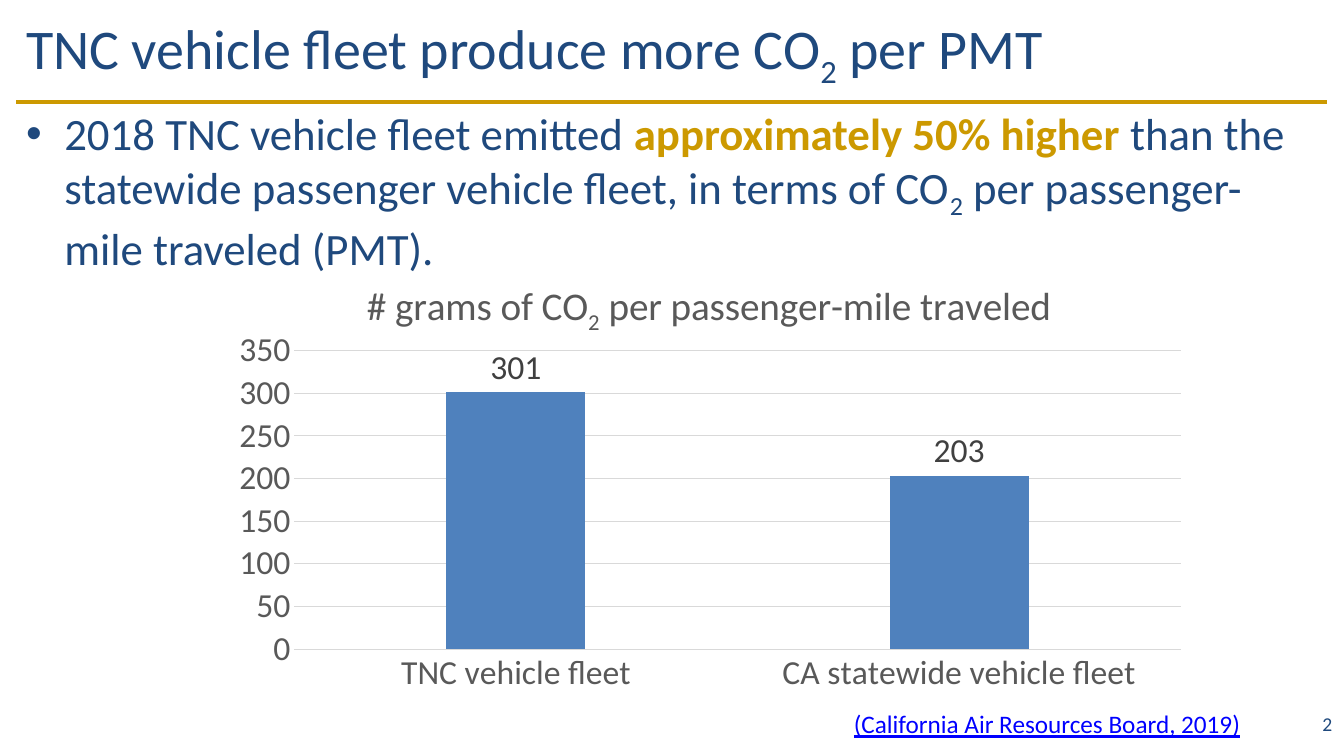
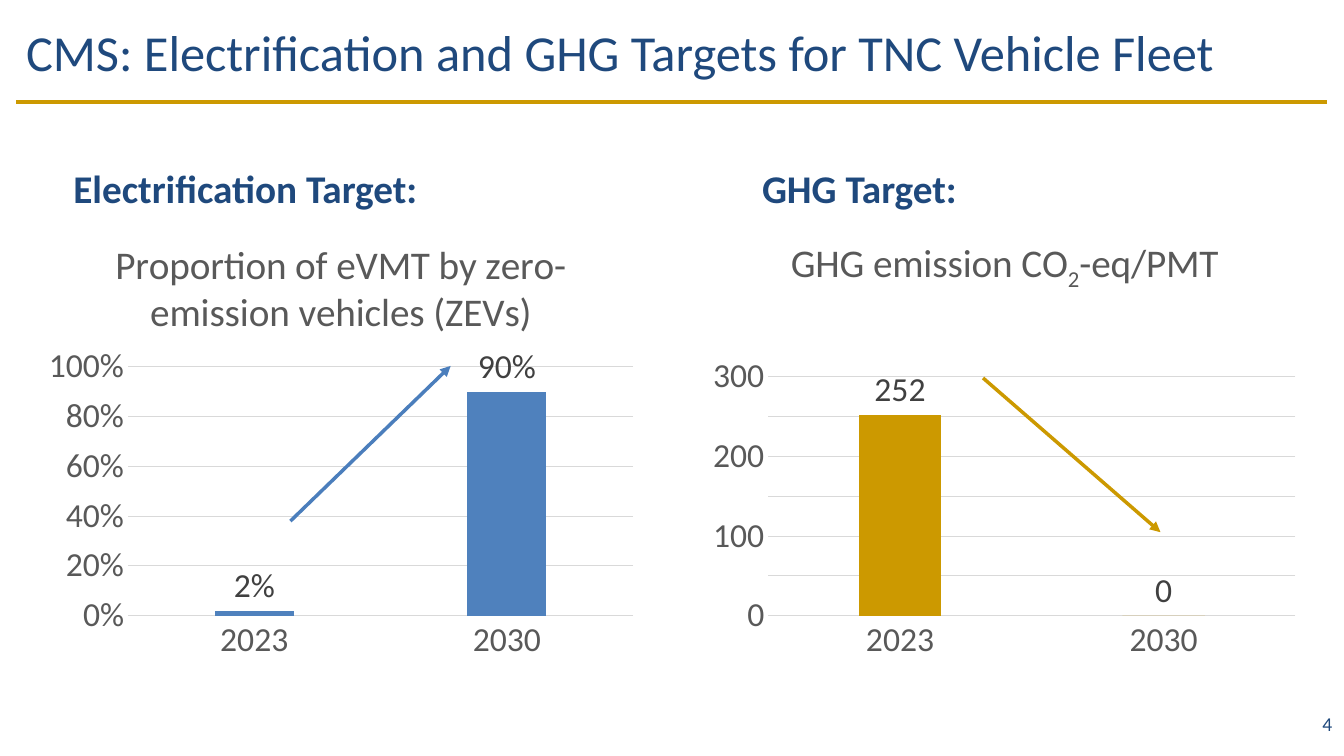
from lxml import etree
from pptx import Presentation
from pptx.chart.data import CategoryChartData
from pptx.dml.color import RGBColor
from pptx.enum.chart import XL_CHART_TYPE, XL_LABEL_POSITION, XL_TICK_MARK
from pptx.enum.shapes import MSO_CONNECTOR
from pptx.enum.text import MSO_ANCHOR, PP_ALIGN
from pptx.oxml.ns import qn
from pptx.util import Pt

# Shared style: 100 px make one inch
PX = 9144
FONT = "Calibri"
NAVY = RGBColor(0x1F, 0x49, 0x7D)
GOLD = RGBColor(0xCC, 0x99, 0x00)
BLUE = RGBColor(0x4F, 0x81, 0xBD)
ARROW_BLUE = RGBColor(0x4B, 0x7E, 0xBC)
LINK_BLUE = RGBColor(0x00, 0x00, 0xFF)
AXIS_GRAY = RGBColor(0x59, 0x59, 0x59)
LABEL_GRAY = RGBColor(0x40, 0x40, 0x40)
GRID_GRAY = RGBColor(0xD9, 0xD9, 0xD9)
COLUMN = XL_CHART_TYPE.COLUMN_CLUSTERED
OUTSIDE_END = XL_LABEL_POSITION.OUTSIDE_END
NO_TICK = XL_TICK_MARK.NONE
STRAIGHT = MSO_CONNECTOR.STRAIGHT
TOP, MIDDLE = MSO_ANCHOR.TOP, MSO_ANCHOR.MIDDLE
LEFT, CENTER = PP_ALIGN.LEFT, PP_ALIGN.CENTER

TITLE_BOX = (16, 1, 1300, 100)
NUMBER_BOX = (1161, 698, 311, 40)
PLAIN, SUBSCRIPT, STRONG = "plain", "subscript", "strong"


def write_text(text_frame, runs, size, color, bold=False, align=LEFT):
    """Fill the first paragraph with (text, style) runs and return it."""
    paragraph = text_frame.paragraphs[0]
    paragraph.alignment = align
    font = paragraph.font
    font.name, font.size, font.bold = FONT, Pt(size), bold
    font.color.rgb = color
    for text, style in runs:
        run = paragraph.add_run()
        run.text = text
        if style == SUBSCRIPT:
            run._r.get_or_add_rPr().set("baseline", "-25000")
        elif style == STRONG:
            run.font.bold = True
            run.font.color.rgb = GOLD
    return paragraph


def add_column_chart(slide, box, plot_box, title_runs, categories, values,
                     color, maximum, unit, number_format):
    """Add a one-series column chart; both boxes are in slide px."""
    data = CategoryChartData()
    data.categories = categories
    data.add_series("Series 1", values)
    chart = slide.shapes.add_chart(COLUMN, *(n * PX for n in box), data).chart
    chart.has_legend = False
    chart.font.name, chart.font.size = FONT, Pt(24)
    chart.font.color.rgb = AXIS_GRAY

    chart.has_title = True
    chart.chart_title.include_in_layout = False
    write_text(chart.chart_title.text_frame, title_runs, 28, AXIS_GRAY, align=CENTER)

    # Columns and their labels
    plot = chart.plots[0]
    plot.gap_width, plot.overlap = 219, -27
    plot.vary_by_categories = False
    fill = plot.series[0].format.fill
    fill.solid()
    fill.fore_color.rgb = color
    plot.has_data_labels = True
    labels = plot.data_labels
    labels.show_value = True
    labels.position = OUTSIDE_END
    labels.font.name, labels.font.size = FONT, Pt(24)
    labels.font.color.rgb = LABEL_GRAY

    # Axes and gridlines
    category_axis, value_axis = chart.category_axis, chart.value_axis
    for axis in (category_axis, value_axis):
        axis.major_tick_mark = axis.minor_tick_mark = NO_TICK
    value_axis.minimum_scale, value_axis.maximum_scale = 0, maximum
    value_axis.major_unit = unit
    value_axis.format.line.fill.background()
    for line in (category_axis.format.line, value_axis.major_gridlines.format.line):
        line.color.rgb = GRID_GRAY
        line.width = Pt(0.75)
    for numbers in (labels, value_axis.tick_labels):
        numbers.number_format = number_format
        numbers.number_format_is_linked = False

    # Fixed inner plot area, as fractions of the chart
    left, top, width, height = box
    plot_left, plot_top, plot_width, plot_height = plot_box
    plot_area = chart._chartSpace.find(".//" + qn("c:plotArea"))
    layout = plot_area.find(qn("c:layout"))
    if layout is None:
        layout = etree.Element(qn("c:layout"))
        plot_area.insert(0, layout)
    manual = etree.SubElement(layout, qn("c:manualLayout"))
    settings = (
        ("layoutTarget", "inner"), ("xMode", "edge"), ("yMode", "edge"),
        ("x", (plot_left - left) / width), ("y", (plot_top - top) / height),
        ("w", plot_width / width), ("h", plot_height / height),
    )
    for name, value in settings:
        etree.SubElement(manual, qn("c:" + name)).set("val", str(value))


presentation = Presentation()
presentation.slide_width = 1333 * PX
presentation.slide_height = 750 * PX
blank_layout = presentation.slide_layouts[6]
emissions_slide = presentation.slides.add_slide(blank_layout)
targets_slide = presentation.slides.add_slide(blank_layout)

# Charts
add_column_chart(
    emissions_slide, (217, 263, 972, 435), (292, 348, 879, 296),
    [("# grams of CO", PLAIN), ("2", SUBSCRIPT),
     (" per passenger-mile traveled", PLAIN)],
    ["TNC vehicle fleet", "CA statewide vehicle fleet"], [301, 203],
    BLUE, 350, 50, "General")
add_column_chart(
    targets_slide, (36, 215, 604, 450), (127, 364, 501, 247),
    [("Proportion of eVMT by zero-emission vehicles (ZEVs)", PLAIN)],
    ["2023", "2030"], [0.02, 0.9], BLUE, 1, 0.2, "0%")
add_column_chart(
    targets_slide, (696, 220, 601, 445), (762, 374, 523, 237),
    [("GHG emission CO", PLAIN), ("2", SUBSCRIPT), ("-eq/PMT", PLAIN)],
    ["2023", "2030"], [252, 0], GOLD, 300, 50, "General")

# Text: slide, box, runs, size, color, bold, anchor, alignment
texts = [
    (emissions_slide, TITLE_BOX,
     [("TNC vehicle fleet produce more CO", PLAIN), ("2", SUBSCRIPT),
      (" per PMT", PLAIN)], 40, NAVY, False, MIDDLE, LEFT),
    (emissions_slide, NUMBER_BOX, [("2", PLAIN)], 14, NAVY, False, MIDDLE, CENTER),
    (targets_slide, TITLE_BOX,
     [("CMS: Electrification and GHG Targets for TNC Vehicle Fleet", PLAIN)],
     36, NAVY, False, MIDDLE, LEFT),
    (targets_slide, NUMBER_BOX, [("4", PLAIN)], 14, NAVY, False, MIDDLE, CENTER),
    (targets_slide, (63, 158, 633, 482), [("Electrification Target:", PLAIN)],
     28, NAVY, True, TOP, LEFT),
    (targets_slide, (746, 158, 633, 482), [("GHG Target:", PLAIN)],
     28, NAVY, True, TOP, LEFT),
]
for slide, box, runs, size, color, bold, anchor, align in texts:
    text_frame = slide.shapes.add_textbox(*(n * PX for n in box)).text_frame
    text_frame.word_wrap = True
    text_frame.vertical_anchor = anchor
    write_text(text_frame, runs, size, color, bold, align)

# Bulleted finding
finding = emissions_slide.shapes.add_textbox(16 * PX, 100 * PX, 1300 * PX, 495 * PX)
finding.text_frame.word_wrap = True
paragraph = write_text(
    finding.text_frame,
    [("2018 TNC vehicle fleet emitted ", PLAIN),
     ("approximately 50% higher ", STRONG),
     ("than the statewide passenger vehicle fleet, in terms of CO", PLAIN),
     ("2", SUBSCRIPT),
     (" per passenger-mile traveled (PMT).", PLAIN)], 32, NAVY)
properties = paragraph._p.get_or_add_pPr()
properties.set("marL", str(38 * PX))
properties.set("indent", str(-38 * PX))
bullet_font = etree.Element(qn("a:buFont"), typeface="Arial")
bullet = etree.Element(qn("a:buChar"), char="•")
properties.insert(0, bullet_font)
properties.insert(1, bullet)

# Citation
citation = emissions_slide.shapes.add_textbox(837 * PX, 698 * PX, 413 * PX, 40 * PX)
citation.text_frame.word_wrap = False
paragraph = write_text(
    citation.text_frame, [("(California Air Resources Board, 2019)", PLAIN)],
    18, LINK_BLUE)
paragraph.font.underline = True

# Title rules and trend arrows: slide, start and end, color, width, arrowhead
lines = [
    (emissions_slide, (16, 101, 1316, 101), GOLD, 3, False),
    (targets_slide, (16, 101, 1316, 101), GOLD, 3, False),
    (targets_slide, (288, 517, 447, 363), ARROW_BLUE, 2.5, True),
    (targets_slide, (975, 375, 1151, 528), GOLD, 2.5, True),
]
for slide, ends, color, width, has_arrowhead in lines:
    connector = slide.shapes.add_connector(STRAIGHT, *(n * PX for n in ends))
    connector.line.color.rgb = color
    connector.line.width = Pt(width)
    shape_properties = connector._element.spPr
    if has_arrowhead:
        outline = shape_properties.find(qn("a:ln"))
        etree.SubElement(outline, qn("a:tailEnd"), type="triangle")
    etree.SubElement(shape_properties, qn("a:effectLst"))

presentation.save("out.pptx")
